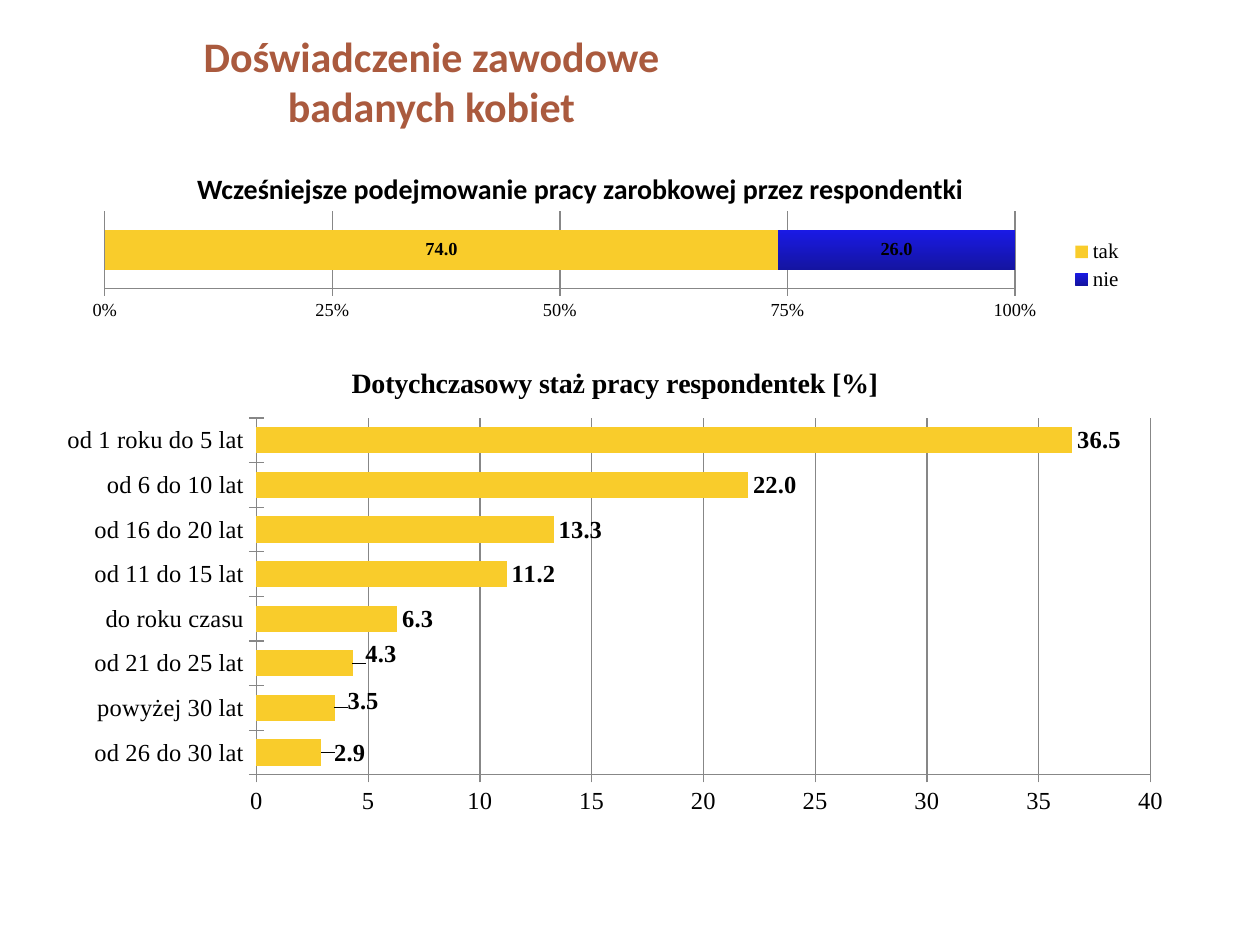
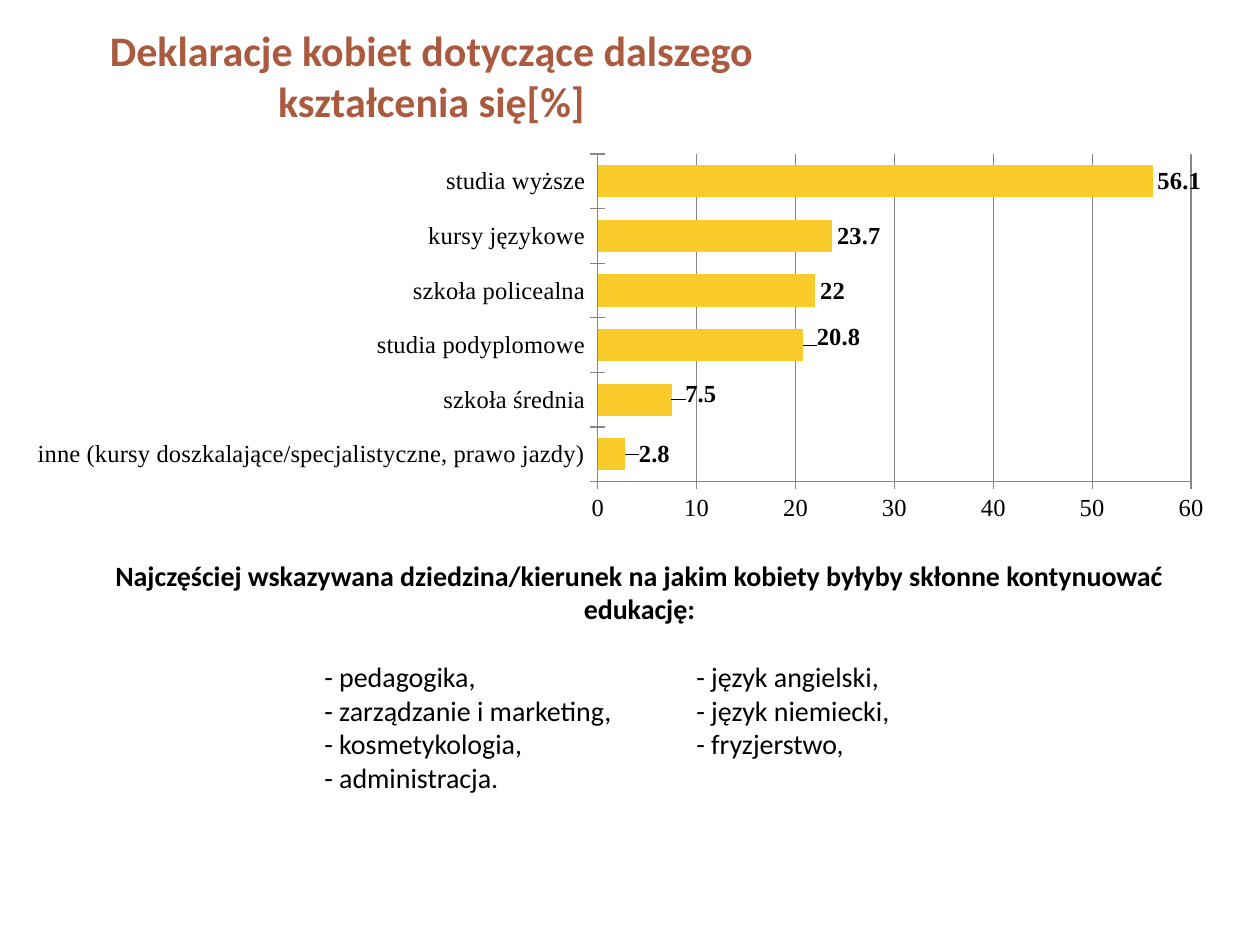
from lxml import etree
from pptx import Presentation
from pptx.chart.data import CategoryChartData
from pptx.dml.color import RGBColor
from pptx.enum.chart import XL_CHART_TYPE as CT, XL_LABEL_POSITION as LP
from pptx.enum.chart import XL_LEGEND_POSITION, XL_TICK_MARK as TM
from pptx.enum.text import MSO_ANCHOR, MSO_AUTO_SIZE as FIT, PP_ALIGN
from pptx.oxml.ns import qn
from pptx.util import Emu, Pt

PX = 914400 / 126
RUST, YELLOW, BLACK, GRID = "AA5A3E", "F9CC2B", "000000", "878787"
BLUE_TOP, BLUE_BOTTOM = "1A1AE6", "1414A0"
SANS, SERIF = "Calibri", "Times New Roman"

EXPERIENCE = [("od 26 do 30 lat", 2.9), ("powyżej 30 lat", 3.5),
              ("od 21 do 25 lat", 4.3), ("do roku czasu", 6.3),
              ("od 11 do 15 lat", 11.2), ("od 16 do 20 lat", 13.3),
              ("od 6 do 10 lat", 22), ("od 1 roku do 5 lat", 36.5)]
EDUCATION = [("inne (kursy doszkalające/specjalistyczne, prawo jazdy)", 2.8),
             ("szkoła średnia", 7.5), ("studia podyplomowe", 20.8),
             ("szkoła policealna", 22), ("kursy językowe", 23.7),
             ("studia wyższe", 56.1)]
FIELDS = [("- pedagogika,", "- język angielski,"),
          ("- zarządzanie i marketing,", "- język niemiecki,"),
          ("- kosmetykologia,", "- fryzjerstwo,"),
          ("- administracja.",)]


def px(n):
    return Emu(round(n * PX))


def rgb(color):
    return RGBColor.from_string(color)


def style(font, size, color=BLACK, bold=False, name=SANS):
    font.name, font.size, font.bold = name, Pt(size), bold
    font.color.rgb = rgb(color)


def add_run(p, text, size, color=BLACK, bold=False):
    r = p.add_run()
    r.text = text
    style(r.font, size, color, bold)


# Text
def add_title_slide(prs, lines, top, height):
    slide = prs.slides.add_slide(prs.slide_layouts[5])
    sp = slide.shapes.title
    sp.left, sp.top, sp.width, sp.height = map(px, (15, top, 833, height))
    tf = sp.text_frame
    tf.auto_size, tf.vertical_anchor = FIT.NONE, MSO_ANCHOR.MIDDLE
    p = tf.paragraphs[0]
    p.alignment = PP_ALIGN.CENTER
    for i, line in enumerate(lines):
        if i:
            p.add_line_break()
        add_run(p, line, 24, RUST, True)
    return slide


def add_heading_box(slide, box, text):
    tf = slide.shapes.add_textbox(*map(px, box)).text_frame
    tf.word_wrap, tf.auto_size = True, FIT.SHAPE_TO_FIT_TEXT
    p = tf.paragraphs[0]
    p.alignment = PP_ALIGN.CENTER
    add_run(p, text, 16, bold=True)
    return tf


def add_columns(tf, rows, stops):
    tf.paragraphs[0].space_after = Pt(19.5)
    for row in rows:
        p = tf.add_paragraph()
        tabs = etree.SubElement(p._p.get_or_add_pPr(), qn("a:tabLst"))
        for stop in stops:
            etree.SubElement(tabs, qn("a:tab"), pos=str(px(stop)), algn="l")
        add_run(p, "".join("\t" + cell for cell in row), 16)


# Charts
def set_layout(parent, index, **values):
    layout = parent.find(qn("c:layout"))
    if layout is None:
        layout = etree.Element(qn("c:layout"))
        parent.insert(index, layout)
    manual = etree.SubElement(layout, qn("c:manualLayout"))
    for tag, value in values.items():
        etree.SubElement(manual, qn("c:" + tag), val=str(value))


def add_bar_chart(slide, kind, box, cats, series, size, gap, plot):
    data = CategoryChartData()
    data.categories = cats
    for name, values in series:
        data.add_series(name, values)
    chart = slide.shapes.add_chart(kind, *map(px, box), data).chart
    style(chart.font, size, name=SERIF)
    chart.has_title = chart.has_legend = False
    bars = chart.plots[0]
    bars.gap_width, bars.vary_by_categories = gap, False
    x, y, w, h = plot
    set_layout(chart._chartSpace.chart.plotArea, 0, layoutTarget="inner",
               xMode="edge", yMode="edge", x=x, y=y, w=w, h=h)
    for axis in (chart.category_axis, chart.value_axis):
        axis.major_tick_mark, axis.minor_tick_mark = TM.CROSS, TM.NONE
        axis.format.line.color.rgb = rgb(GRID)
    axis = chart.value_axis
    axis.minimum_scale = 0
    axis.has_major_gridlines = True
    axis.major_gridlines.format.line.color.rgb = rgb(GRID)
    for ser in bars.series:
        ser.invert_if_negative = False
        ser.format.fill.solid()
        ser.format.fill.fore_color.rgb = rgb(YELLOW)
        labels = ser.data_labels
        labels.show_value = True
        style(labels.font, size, bold=True, name=SERIF)
    return chart


def format_numbers(item, code):
    item.number_format, item.number_format_is_linked = code, False


def add_ranking(slide, box, rows, plot, top_value, step, code, shifts):
    cats, values = zip(*rows)
    chart = add_bar_chart(slide, CT.BAR_CLUSTERED, box, cats,
                          [("Series 1", values)], 14, 70, plot)
    axis = chart.value_axis
    axis.maximum_scale, axis.major_unit = top_value, step
    format_numbers(axis.tick_labels, "#,##0")
    ser = chart.plots[0].series[0]
    format_numbers(ser.data_labels, code)
    ser.data_labels.position = LP.OUTSIDE_END
    # The shortest bars have their labels nudged right and up
    for i, shift in enumerate(shifts):
        label = ser.points[i].data_label
        style(label.font, 14, bold=True, name=SERIF)
        label.position = LP.OUTSIDE_END
        node = ser.data_labels._element.xpath("c:dLbl")[i]
        set_layout(node, 1, x=0.007, y=shift)
    return chart


def add_yes_no(slide, box):
    chart = add_bar_chart(slide, CT.BAR_STACKED_100, box, ["1"],
                          [("tak", [74]), ("nie", [26])], 10.5, 90,
                          (0.029, 0.061, 0.857, 0.627))
    chart.plots[0].overlap = 100
    chart.category_axis.visible = False
    chart.value_axis.major_unit = 0.25
    format_numbers(chart.value_axis.tick_labels, "0%")
    chart.has_legend = True
    chart.legend.position = XL_LEGEND_POSITION.RIGHT
    chart.legend.include_in_layout = False
    style(chart.legend.font, 12, name=SERIF)
    for ser in chart.plots[0].series:
        format_numbers(ser.data_labels, "0.0")
    fill = chart.plots[0].series[1].format.fill
    fill.gradient()
    fill.gradient_angle = 270
    for stop, color in zip(fill.gradient_stops, (BLUE_TOP, BLUE_BOTTOM)):
        stop.color.rgb = rgb(color)


def main():
    prs = Presentation()
    prs.slide_width, prs.slide_height = px(1260), px(945)

    # Work experience
    slide = add_title_slide(prs, ["Doświadczenie zawodowe", "badanych kobiet"],
                            26, 110)
    chart = add_ranking(slide, (44, 344, 1142, 481), EXPERIENCE,
                        (0.186, 0.154, 0.783, 0.742), 40, 5, "0.0",
                        (0, -0.015, -0.02))
    chart.has_title = True
    chart.chart_title.include_in_layout = False
    p = chart.chart_title.text_frame.paragraphs[0]
    r = p.add_run()
    r.text = "Dotychczasowy staż pracy respondentek [%]"
    style(r.font, 16, bold=True, name=SERIF)
    add_yes_no(slide, (74, 204, 1062, 123))
    add_heading_box(slide, (94, 165, 973, 47), "Wcześniejsze podejmowanie "
                    "pracy zarobkowej przez respondentki")

    # Further education
    slide = add_title_slide(
        prs, ["Deklaracje kobiet dotyczące dalszego kształcenia się[%]"],
        16, 118)
    add_ranking(slide, (25, 145, 1206, 397), EDUCATION,
                (0.475, 0.023, 0.492, 0.825), 60, 10, "General",
                (0, -0.015, -0.02))
    tf = add_heading_box(slide, (54, 552, 1171, 251),
                         "Najczęściej wskazywana dziedzina/kierunek na jakim "
                         "kobiety byłyby skłonne kontynuować edukację:")
    add_columns(tf, FIELDS, (258, 630))

    prs.save("out.pptx")


if __name__ == "__main__":
    main()
